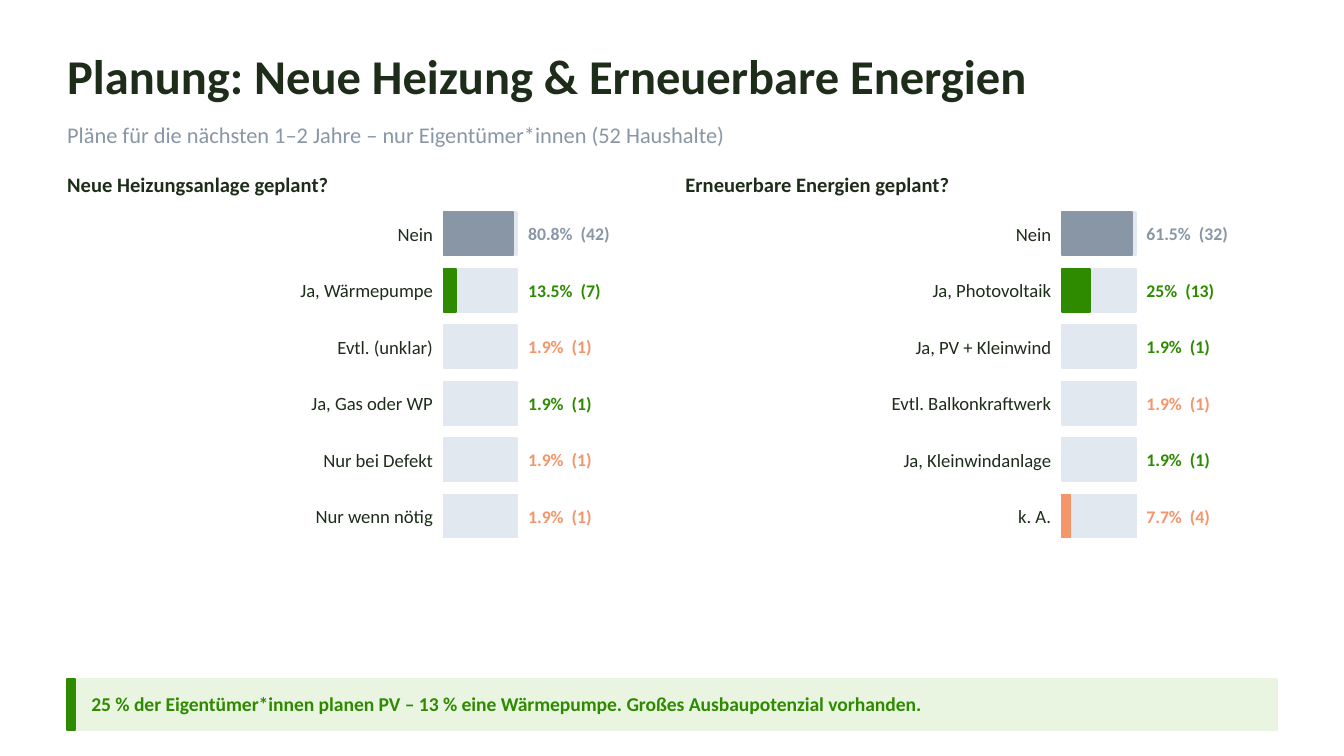
from dataclasses import dataclass

from pptx import Presentation
from pptx import util as u
from pptx.dml import color
from pptx.enum import shapes, text

PX = 9144
WIDE = 1000
HEX = {
    "ink": "1D2D1A",
    "gray": "8896A5",
    "green": "2E8B00",
    "coral": "F4956A",
    "track": "E2E8F0",
    "mint": "E9F5E1",
}
HOMES = 52
TRACK, FULL, LEAST = 55, 52, 3
TOP, STEP, TALL = 158, 42, 32


@dataclass
class Box:
    x: int
    y: int
    w: int
    h: int

    def emu(self) -> list[u.Emu]:
        return [u.Emu(n * PX) for n in (self.x, self.y, self.w, self.h)]


@dataclass
class Row:
    label: str
    count: int
    tint: str


@dataclass
class Panel:
    x: int
    title: str
    rows: list[Row]


PANELS = [
    Panel(50, "Neue Heizungsanlage geplant?", [
        Row("Nein", 42, "gray"),
        Row("Ja, Wärmepumpe", 7, "green"),
        Row("Evtl. (unklar)", 1, "coral"),
        Row("Ja, Gas oder WP", 1, "green"),
        Row("Nur bei Defekt", 1, "coral"),
        Row("Nur wenn nötig", 1, "coral"),
    ]),
    Panel(510, "Erneuerbare Energien geplant?", [
        Row("Nein", 32, "gray"),
        Row("Ja, Photovoltaik", 13, "green"),
        Row("Ja, PV + Kleinwind", 1, "green"),
        Row("Evtl. Balkonkraftwerk", 1, "coral"),
        Row("Ja, Kleinwindanlage", 1, "green"),
        Row("k. A.", 4, "coral"),
    ]),
]


def add_text(slide, box: Box, words: list[str], size: float, tint: str,
             bold: bool = False, right: bool = False):
    frame = slide.shapes.add_textbox(*box.emu()).text_frame
    style = {
        "word_wrap": True,
        "vertical_anchor": text.MSO_ANCHOR.MIDDLE,
        "margin_left": 0,
        "margin_top": 0,
        "margin_right": 0,
        "margin_bottom": 0,
    }
    for key, value in style.items():
        setattr(frame, key, value)
    para = frame.paragraphs[0]
    para.alignment = text.PP_ALIGN.RIGHT if right else text.PP_ALIGN.LEFT
    look = {"name": "Calibri", "size": u.Pt(size), "bold": bold}
    for word in words:
        run = para.add_run()
        run.text = word
        for key, value in look.items():
            setattr(run.font, key, value)
        run.font.color.rgb = color.RGBColor.from_string(HEX[tint])
    return para


def add_bar(slide, box: Box, tint: str) -> None:
    bar = slide.shapes.add_shape(shapes.MSO_SHAPE.RECTANGLE, *box.emu())
    bar.shadow.inherit = False
    for fill in (bar.fill, bar.line.fill):
        fill.solid()
        fill.fore_color.rgb = color.RGBColor.from_string(HEX[tint])
    bar.line.width = u.Pt(1)


def add_row(slide, x: int, y: int, row: Row, most: int) -> None:
    left = x + 280
    add_bar(slide, Box(left, y, TRACK, TALL), "track")
    wide = round(FULL * row.count / most)
    if wide >= LEAST:
        add_bar(slide, Box(left, y, wide, TALL), row.tint)
    add_text(slide, Box(x, y - 1, 272, TALL + 2), [row.label], 10, "ink", right=True)
    share = round(100 * row.count / HOMES, 1)
    para = add_text(slide, Box(x + 343, y, 90, TALL),
                    [f"{share:g}%", " ", f"({row.count})"], 9.5, row.tint, bold=True)
    para.runs[1].font._element.set("spc", "215")


def add_panel(slide, panel: Panel) -> None:
    add_text(slide, Box(panel.x, 122, 440, 30), [panel.title], 11, "ink", bold=True)
    most = max(row.count for row in panel.rows)
    for i, row in enumerate(panel.rows):
        add_row(slide, panel.x, TOP + i * STEP, row, most)


def main() -> None:
    deck = Presentation()
    deck.slide_width = u.Emu(WIDE * PX)
    deck.slide_height = u.Emu(WIDE * PX * 9 // 16)
    slide = deck.slides.add_slide(deck.slide_layouts[6])
    add_text(slide, Box(50, 28, 900, 55),
             ["Planung: Neue Heizung & Erneuerbare Energien"], 26, "ink", bold=True)
    add_text(slide, Box(50, 85, 900, 30),
             ["Pläne für die nächsten 1–2 Jahre – nur Eigentümer*innen (52 Haushalte)"],
             12, "gray")
    for panel in PANELS:
        add_panel(slide, panel)
    add_bar(slide, Box(50, 505, 900, 38), "mint")
    add_bar(slide, Box(50, 505, 6, 38), "green")
    add_text(slide, Box(68, 506, 870, 36),
             ["25 % der Eigentümer*innen planen PV – 13 % eine Wärmepumpe. "
              "Großes Ausbaupotenzial vorhanden."], 10.5, "green", bold=True)
    deck.save("out.pptx")


if __name__ == "__main__":
    main()
